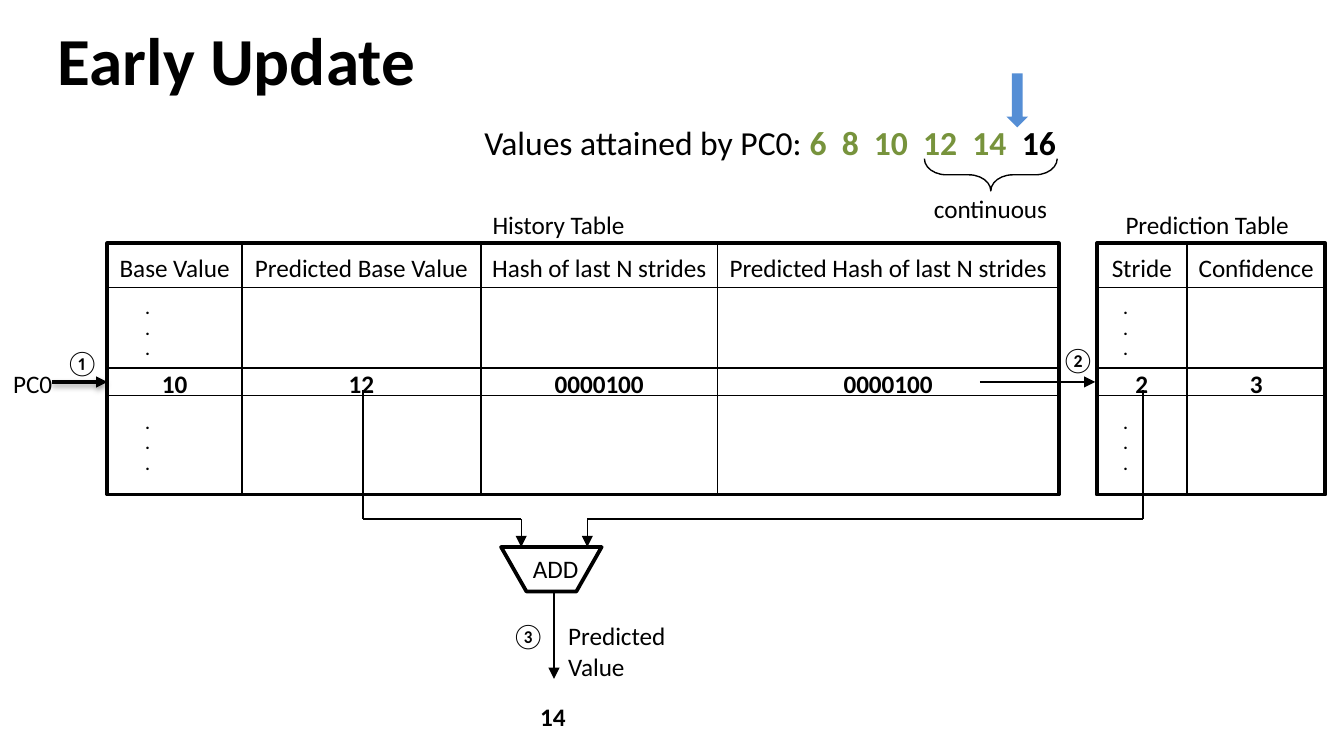
from itertools import accumulate, pairwise

from lxml import etree
from pptx import Presentation
from pptx.dml.color import RGBColor
from pptx.enum import shapes, text
from pptx.oxml import parse_xml
from pptx.oxml.ns import nsdecls, qn
from pptx.util import Cm, Pt

BLACK = RGBColor(0x00, 0x00, 0x00)
WHITE = RGBColor(0xFF, 0xFF, 0xFF)
GREEN = RGBColor(0x77, 0x93, 0x3C)
BLUE = RGBColor(0x55, 0x8E, 0xD5)
FONT = "Calibri"
LEFT, MID = text.PP_ALIGN.LEFT, text.PP_ALIGN.CENTER
FORM = shapes.MSO_SHAPE

# Row lines shared by both tables, measured from the table top (cm)
ROWS = (0.84, 2.36, 2.87)
SHADOW = (
    f'<a:effectLst {nsdecls("a")}><a:outerShdw blurRad="39400" dist="20300" '
    'dir="5400000"><a:srgbClr val="000000"><a:alpha val="38000"/></a:srgbClr>'
    '</a:outerShdw></a:effectLst>'
)


def style(par, size=13.5, bold=False, align=LEFT):
    par.alignment = align
    par.font.name, par.font.size, par.font.bold = FONT, Pt(size), bold
    par.font.color.rgb = BLACK


def label(slide, words, box, align=MID, size=13.5, bold=False):
    """Add a text box with one paragraph per line of words."""
    frame = slide.shapes.add_textbox(*map(Cm, box)).text_frame
    frame.word_wrap = True
    frame.text = words
    for par in frame.paragraphs:
        style(par, size, bold, align)
    return frame


def shape(slide, form, box, fill=None, line=None, turn=0, adjust=()):
    item = slide.shapes.add_shape(form, *map(Cm, box))
    item.shadow.inherit = False
    item.rotation = turn
    for i, value in enumerate(adjust):
        item.adjustments[i] = value
    if fill is None:
        item.fill.background()
    else:
        item.fill.solid()
        item.fill.fore_color.rgb = fill
    if line is None:
        item.line.fill.background()
    else:
        item.line.color.rgb, item.line.width = BLACK, Pt(line)
    return item


def line(slide, x1, y1, x2, y2, width=0.75, arrow=False, shade=False):
    item = slide.shapes.add_connector(
        shapes.MSO_CONNECTOR.STRAIGHT, Cm(x1), Cm(y1), Cm(x2), Cm(y2))
    item.line.color.rgb, item.line.width = BLACK, Pt(width)
    if arrow:
        etree.SubElement(item.line._get_or_add_ln(), qn("a:tailEnd"), type="triangle")
    prop = item._element.spPr
    if shade:
        prop.append(parse_xml(SHADOW))
    else:
        etree.SubElement(prop, qn("a:effectLst"))


def heading(slide, words, box):
    title = slide.shapes.title
    title.left, title.top, title.width, title.height = map(Cm, box)
    frame = title.text_frame
    frame.text = words
    frame.auto_size = text.MSO_AUTO_SIZE.NONE
    frame.vertical_anchor = text.MSO_ANCHOR.MIDDLE
    style(frame.paragraphs[0], 36, True)


def series(slide, box):
    """Sequence of values with a pointer and a brace."""
    x, y, wide, high = box
    par = label(slide, "Values attained by PC0: ", box, size=18).paragraphs[0]
    for words, color in (("6  8  10  12  14  ", GREEN), ("16", BLACK)):
        run = par.add_run()
        run.text = words
        run.font.bold, run.font.color.rgb = True, color
    shape(slide, FORM.DOWN_ARROW, (x + 14.7, y - 0.79, 0.41, 1.02), fill=BLUE)
    shape(slide, FORM.RIGHT_BRACE, (x + 14.1, y - 0.13, 0.61, 2.51),
          line=0.75, turn=90, adjust=(0.68, 0.5))
    label(slide, "continuous", (x + 13.0, y + 1.35, 2.8, 0.84))


def dots(slide, x, y):
    for par in label(slide, ".\n.\n.", (x, y, 0.65, 1.42), LEFT, 9, True).paragraphs:
        par.runs[0]._r.get_or_add_rPr().set("spc", "-220")


def grid(slide, box, name, spot, cols, inset):
    """Draw a table; cols holds (width, header, value), spot the caption's x and width."""
    x, y, wide, high = box
    shape(slide, FORM.RECTANGLE, box, WHITE, 2)
    label(slide, name, (x + spot[0], y - 0.76, spot[1], 0.84))
    for row in ROWS:
        line(slide, x, y + row, x + wide, y + row)
    edges = list(accumulate((col[0] for col in cols), initial=x))
    for edge in edges[1:-1]:
        line(slide, edge, y, edge, y + high)
    # Headers and values are centred on their columns
    for (a, b), (_, head, value) in zip(pairwise(edges), cols):
        pad = (a - 0.1, b - a + 0.2)
        label(slide, head, (pad[0], y + 0.04, pad[1], 0.84))
        label(slide, value, (pad[0], y + 2.24, pad[1], 0.84), bold=True)
    for top in (0.91, 3.08):
        dots(slide, x + inset, y + top)


def adder(slide, box, bus, feeds):
    """Adder with two inputs from above; feeds holds (source x, entry offset)."""
    x, y, wide, high = box
    shape(slide, FORM.TRAPEZOID, box, line=2, turn=180, adjust=(0.57,))
    label(slide, "ADD", (x + 0.08, y, wide, high))
    for source, entry in feeds:
        line(slide, source, 7.37, source, bus)
        line(slide, source, bus, x + entry, bus)
        line(slide, x + entry, bus, x + entry, y, arrow=True)
    # Result
    base = y + high
    line(slide, x + 1, base, x + 1, base + 1.65, arrow=True)
    label(slide, "③", (x - 0.05, base + 0.43, 1.14, 0.84), LEFT)
    label(slide, "Predicted Value", (x + 1.02, base + 0.43, 2.9, 1.42), LEFT)
    label(slide, "14", (x + 0.49, base + 1.95, 1.04, 0.84), LEFT, bold=True)


def main():
    deck = Presentation()
    deck.slide_width, deck.slide_height = Cm(25.4), Cm(14.29)
    slide = deck.slides.add_slide(deck.slide_layouts[5])

    heading(slide, "Early Update", (0.84, 0.15, 23.7, 1.9))
    series(slide, (4.32, 2.18, 20.47, 1.02))

    # Tables
    grid(slide, (2.03, 4.6, 17.98, 4.75), "History Table", (6.86, 3.33), (
        (2.54, "Base Value", "10"),
        (4.52, "Predicted Base Value", "12"),
        (4.47, "Hash of last N strides", "0000100"),
        (6.45, "Predicted Hash of last N strides", "0000100"),
    ), 0.47)
    grid(slide, (20.73, 4.6, 4.32, 4.75), "Prediction Table", (0.23, 3.71), (
        (1.7, "Stride", "2"),
        (2.62, "Confidence", "3"),
    ), 0.25)

    # Lookups into the tables
    label(slide, "PC0", (0, 6.83, 1.4, 0.84), LEFT)
    line(slide, 0.99, 7.22, 2.03, 7.22, 2, True, True)
    label(slide, "①", (0.99, 6.45, 1.14, 0.84), LEFT)
    line(slide, 18.52, 7.22, 20.7, 7.22, arrow=True)
    label(slide, "②", (19.81, 6.38, 1.14, 0.84), LEFT)

    adder(slide, (9.47, 10.34, 1.9, 0.84), 9.81, ((6.86, 0.38), (21.6, 1.63)))
    deck.save("out.pptx")


if __name__ == "__main__":
    main()
